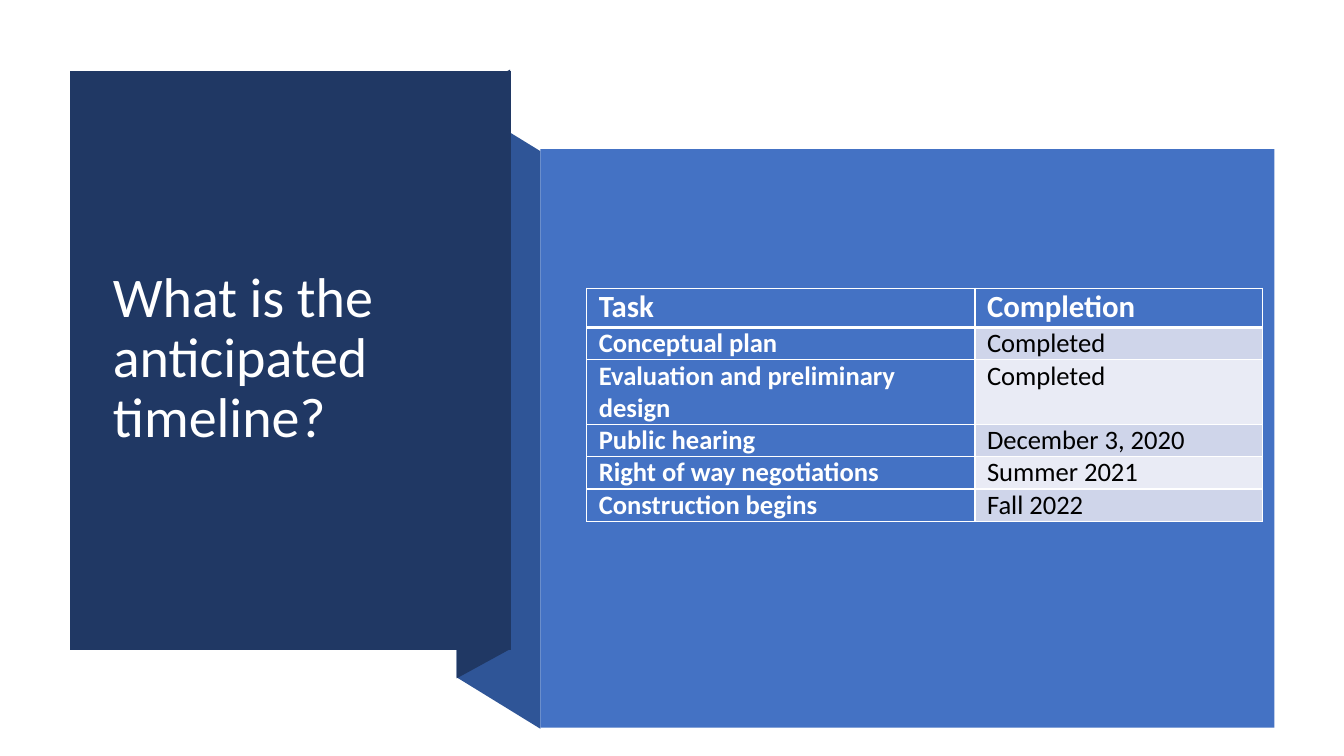
from lxml.etree import SubElement
from pptx import Presentation
from pptx.dml.color import RGBColor
from pptx.enum.shapes import MSO_SHAPE as Shape
from pptx.enum.text import MSO_ANCHOR as Anchor, PP_ALIGN as Align
from pptx.oxml.ns import qn
from pptx.util import Inches, Pt

COLORS = {
    "white": "FFFFFF", "black": "000000", "navy": "203864", "fold": "2F5597",
    "blue": "4472C4", "band_dark": "CFD5EA", "band_light": "E9EBF5",
}


def paint(shape, color):
    shape.fill.solid()
    shape.fill.fore_color.rgb = RGBColor.from_string(COLORS[color])
    shape.line.fill.background()
    shape.shadow.inherit = False


def style_font(font, size, color, bold):
    formats = {"name": "Calibri", "size": Pt(size), "bold": bold}
    for name, value in formats.items():
        setattr(font, name, value)
    font.color.rgb = RGBColor.from_string(COLORS[color])


prs = Presentation()
prs.slide_width, prs.slide_height = Inches(13.33), Inches(7.5)
slide = prs.slides.add_slide(prs.slide_layouts[5])
shapes = slide.shapes

# Folded ribbon and title panel, from back to front
ribbon = [
    ("fold", [(5.36, 7.23), (4.53, 6.72), (4.53, 0.99), (5.36, 1.5)]),
    ("navy", [(5.06, 6.44), (4.53, 6.73), (4.53, 0.98), (5.06, 0.69)]),
    ("navy", [(0.69, 0.7), (5.07, 0.7), (5.07, 6.45), (0.69, 6.45)]),
]
for color, corners in ribbon:
    points = [(Inches(x), Inches(y)) for x, y in corners]
    outline = shapes.build_freeform(*points[0])
    outline.add_line_segments(points[1:], close=True)
    paint(outline.convert_to_shape(), color)

# Title, brought in front of the ribbon
title = shapes.title
title.element.getparent().append(title.element)
title.left, title.top = Inches(1.02), Inches(1.07)
title.width, title.height = Inches(3.71), Inches(4.99)
title.text_frame.text = "What is the anticipated timeline?"
title.text_frame.word_wrap = True
title.text_frame.vertical_anchor = Anchor.MIDDLE
question = title.text_frame.paragraphs[0]
question.alignment = Align.LEFT
question.line_spacing = 0.9
style_font(question.runs[0].font, 40, "white", False)

# Panel behind the timeline
panel = shapes.add_shape(Shape.RECTANGLE, Inches(5.36), Inches(1.48),
                         Inches(7.28), Inches(5.74))
paint(panel, "blue")

# Timeline table
timeline = [
    ("Task", "Completion"),
    ("Conceptual plan", "Completed"),
    ("Evaluation and preliminary design", "Completed"),
    ("Public hearing", "December 3, 2020"),
    ("Right of way negotiations", "Summer 2021"),
    ("Construction begins", "Fall 2022"),
]
row_heights = [0.39, 0.31, 0.62, 0.31, 0.31, 0.31]
table = shapes.add_table(len(timeline), 2, Inches(5.82), Inches(2.86),
                         Inches(6.7), Inches(sum(row_heights))).table
for column, width in zip(table.columns, (3.85, 2.85)):
    column.width = Inches(width)
margins = {"margin_left": 0.12, "margin_right": 0.12,
           "margin_top": 0, "margin_bottom": 0}

for r, entries in enumerate(timeline):
    table.rows[r].height = Inches(row_heights[r])
    for c, entry in enumerate(entries):
        cell = table.cell(r, c)
        for name, value in margins.items():
            setattr(cell, name, Inches(value))
        cell.text = entry
        heading = r == 0 or c == 0
        style_font(cell.text_frame.paragraphs[0].runs[0].font,
                   22 if r == 0 else 19,
                   "white" if heading else "black", heading)

        # White borders, thicker under the header row
        borders = {"lnL": 1, "lnR": 1, "lnT": 3 if r == 1 else 1,
                   "lnB": 3 if r == 0 else 1}
        properties = cell._tc.get_or_add_tcPr()
        for side, points in borders.items():
            border = SubElement(properties, qn(f"a:{side}"), w=str(Pt(points)))
            border_fill = SubElement(border, qn("a:solidFill"))
            SubElement(border_fill, qn("a:srgbClr"), val=COLORS["white"])

        band = "band_dark" if r % 2 else "band_light"
        cell.fill.solid()
        cell.fill.fore_color.rgb = RGBColor.from_string(
            COLORS["blue" if heading else band])

prs.save("out.pptx")
